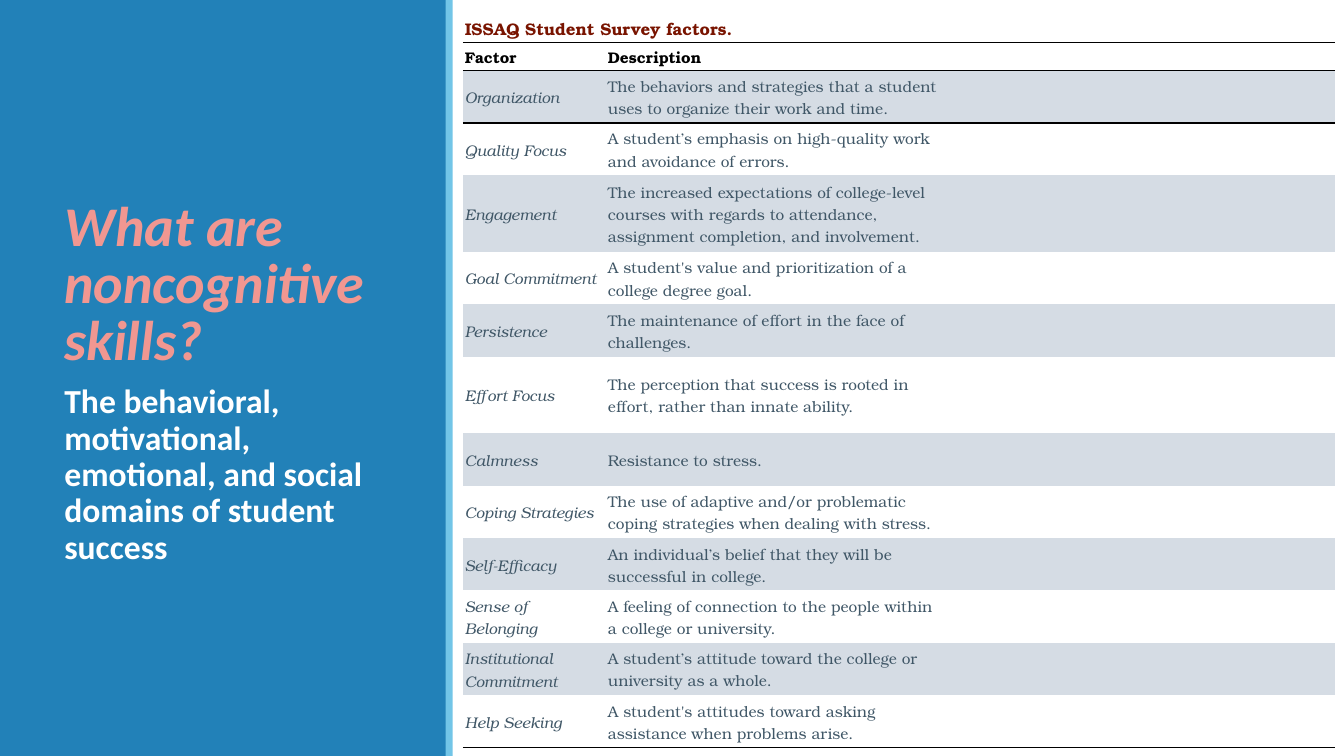
from lxml import etree
from pptx import Presentation
from pptx.dml.color import RGBColor
from pptx.enum.shapes import MSO_SHAPE
from pptx.enum.text import MSO_ANCHOR
from pptx.oxml.ns import qn
from pptx.util import Inches, Pt

RECT = MSO_SHAPE.RECTANGLE
TOP, MIDDLE, BOTTOM = MSO_ANCHOR.TOP, MSO_ANCHOR.MIDDLE, MSO_ANCHOR.BOTTOM
NO_GRID_STYLE = "{2D5ABB26-0587-4C30-8999-92F81FD0307C}"
COLORS = {
    "panel": "2281B8", "stripe": "72C5E7", "title": "F19791", "white": "FFFFFF",
    "caption": "791400", "black": "000000", "text": "405767", "band": "D5DCE4",
}
SANS, SERIF = "Calibri", "TeX Gyre Bonum"
COL_WIDTHS = [1.42, 3.32, 3.91]
CAPTION = "ISSAQ Student Survey factors."
HEADERS = ("Factor", "Description")
ROW_HEIGHT, TALL_HEIGHT = 0.52, 0.76
TALL_FACTORS = {"Engagement", "Effort Focus"}
FACTORS = [
    ("Organization", "The behaviors and strategies that a student uses to organize their work and time."),
    ("Quality Focus", "A student’s emphasis on high-quality work and avoidance of errors."),
    ("Engagement", "The increased expectations of college-level courses with regards to attendance, "
                   "assignment completion, and involvement."),
    ("Goal Commitment", "A student's value and prioritization of a college degree goal."),
    ("Persistence", "The maintenance of effort in the face of challenges."),
    ("Effort Focus", "The perception that success is rooted in effort, rather than innate ability."),
    ("Calmness", "Resistance to stress."),
    ("Coping Strategies", "The use of adaptive and/or problematic coping strategies when dealing with stress."),
    ("Self-Efficacy", "An individual’s belief that they will be successful in college."),
    ("Sense of Belonging", "A feeling of connection to the people within a college or university."),
    ("Institutional Commitment", "A student’s attitude toward the college or university as a whole."),
    ("Help Seeking", "A student's attitudes toward asking assistance when problems arise."),
]
TITLE_FONT = {"name": SANS, "size": Pt(40), "bold": True, "italic": True}
BODY_FONT = {"name": SANS, "size": Pt(24), "bold": True}
CAPTION_FONT = {"name": SERIF, "size": Pt(12), "bold": True}
HEADER_FONT = {"name": SERIF, "size": Pt(11), "bold": True}
FACTOR_FONT = {"name": SERIF, "size": Pt(11), "bold": False, "italic": True}
DESCRIPTION_FONT = {"name": SERIF, "size": Pt(11), "bold": False, "italic": False}


def rgb(key):
    return RGBColor.from_string(COLORS[key])


def write(tf, text, font, color, spacing):
    p = tf.paragraphs[0]
    p.line_spacing = spacing
    r = p.add_run()
    r.text = text
    for name, value in font.items():
        setattr(r.font, name, value)
    r.font.color.rgb = rgb(color)


def add_bar(s, left, width, color):
    sp = s.shapes.add_shape(RECT, Inches(left), 0, Inches(width), Inches(7.5))
    sp.shadow.inherit = False
    sp.fill.solid()
    sp.fill.fore_color.rgb = rgb(color)
    sp.line.fill.background()


def add_text(s, top, height, text, font, color, spacing, anchor):
    sp = s.shapes.add_textbox(Inches(0.54), Inches(top), Inches(3.37), Inches(height))
    tf = sp.text_frame
    tf.word_wrap = True
    tf.vertical_anchor = anchor
    write(tf, text, font, color, spacing)


def add_border(cell, side):
    ln = etree.SubElement(cell._tc.get_or_add_tcPr(), qn(f"a:ln{side}"), w=str(Pt(1)))
    fill = etree.SubElement(ln, qn("a:solidFill"))
    etree.SubElement(fill, qn("a:srgbClr"), val=COLORS["black"])


def format_cell(cell, sides, fill):
    for margin in ("left", "right", "top", "bottom"):
        setattr(cell, f"margin_{margin}", Inches(0.02))
    cell.vertical_anchor = MIDDLE
    for side in sides:
        add_border(cell, side)
    cell.fill.solid()
    cell.fill.fore_color.rgb = rgb(fill)


def fill_row(table, row, texts, fonts, color, sides, fill):
    for col in range(len(COL_WIDTHS)):
        cell = table.cell(row, col)
        format_cell(cell, sides, fill)
        if col < len(texts):
            write(cell.text_frame, texts[col], fonts[col], color, 1.07)
        else:
            p = cell.text_frame.paragraphs[0]
            etree.SubElement(p._p, qn("a:endParaRPr"), sz="1100")


def add_factor_table(s):
    heights = [0.3, 0.28] + [TALL_HEIGHT if f in TALL_FACTORS else ROW_HEIGHT for f, _ in FACTORS]
    frame = s.shapes.add_table(len(heights), len(COL_WIDTHS), Inches(4.59), Inches(0.12),
                               Inches(sum(COL_WIDTHS)), Inches(sum(heights)))
    table = frame.table
    table.first_row = table.horz_banding = False
    table._tbl.tblPr.find(qn("a:tableStyleId")).text = NO_GRID_STYLE
    for column, width in zip(table.columns, COL_WIDTHS):
        column.width = Inches(width)
    for row, height in zip(table.rows, heights):
        row.height = Inches(height)
    table.cell(0, 0).merge(table.cell(0, len(COL_WIDTHS) - 1))
    fill_row(table, 0, [CAPTION], [CAPTION_FONT], "caption", "B", "white")
    fill_row(table, 1, HEADERS, [HEADER_FONT] * 2, "black", "TB", "white")
    for i, factor in enumerate(FACTORS):
        sides = "T" if i == 0 else "B" if i == len(FACTORS) - 1 else ""
        fill = "white" if i % 2 else "band"
        fill_row(table, i + 2, factor, [FACTOR_FONT, DESCRIPTION_FONT], "text", sides, fill)


def main():
    prs = Presentation()
    prs.slide_width, prs.slide_height = Inches(13.33), Inches(7.5)
    s = prs.slides.add_slide(prs.slide_layouts[6])
    add_bar(s, 0, 4.43, "panel")
    add_text(s, 1.44, 2.3, "What are noncognitive skills?", TITLE_FONT, "title", 0.85, BOTTOM)
    add_text(s, 3.77, 1.94, "The behavioral, motivational, emotional, and social domains of student success",
             BODY_FONT, "white", 0.9, TOP)
    add_bar(s, 4.42, 0.07, "stripe")
    add_factor_table(s)
    prs.save("out.pptx")


if __name__ == "__main__":
    main()
